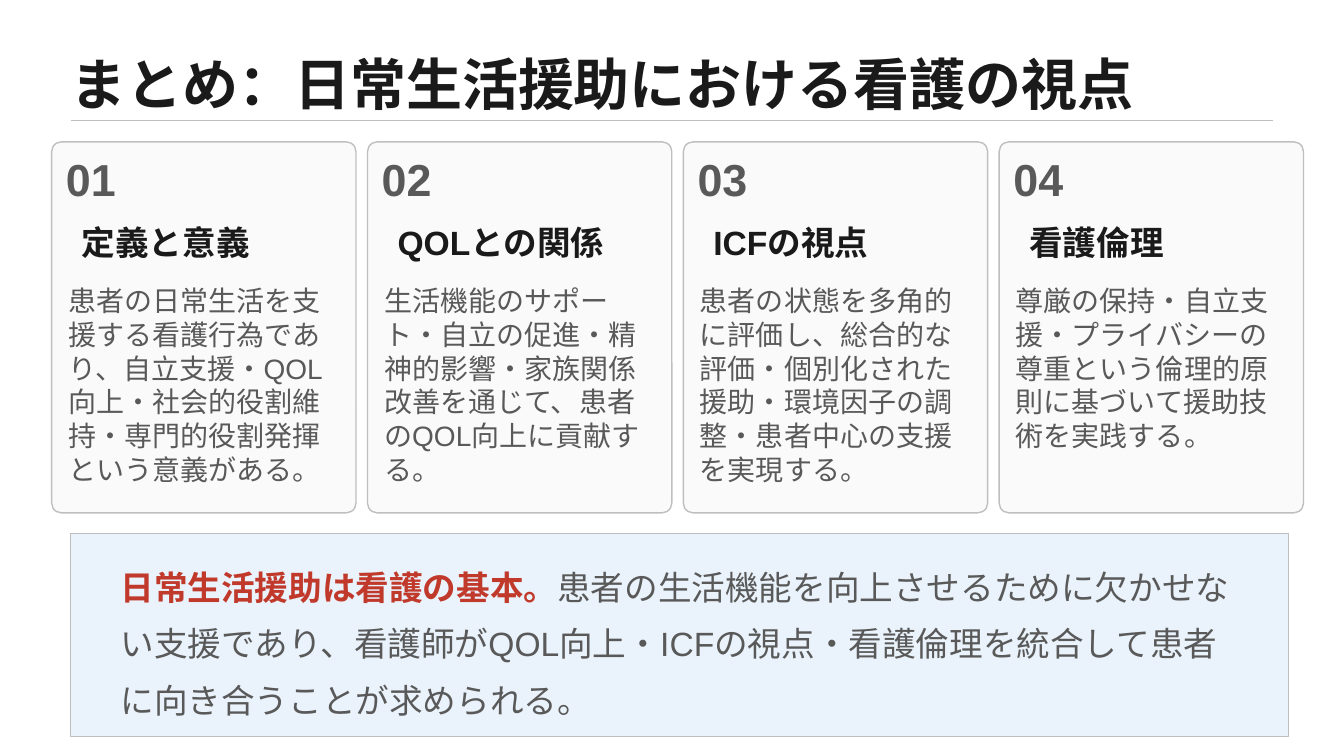
from dataclasses import dataclass

from lxml import etree
from pptx import Presentation
from pptx.dml.color import RGBColor
from pptx.enum.shapes import MSO_CONNECTOR, MSO_SHAPE
from pptx.enum.text import MSO_ANCHOR, PP_ALIGN
from pptx.oxml.ns import qn
from pptx.util import Pt

STRAIGHT = MSO_CONNECTOR.STRAIGHT
RECTANGLE = MSO_SHAPE.RECTANGLE
ROUNDED = MSO_SHAPE.ROUNDED_RECTANGLE
TOP = MSO_ANCHOR.TOP
MIDDLE = MSO_ANCHOR.MIDDLE
LEFT = PP_ALIGN.LEFT
CENTER = PP_ALIGN.CENTER


@dataclass(frozen=True)
class Theme:
    """Colours, font and type sizes of the slide."""
    font: str = "Arial"
    ink: str = "1A1A1A"
    body: str = "595959"
    accent: str = "C0392B"
    rule: str = "BFBFBF"
    card: str = "FAFAFA"
    banner: str = "EAF3FB"
    title_size: int = 40
    number_size: int = 32
    heading_size: int = 24
    body_size: int = 20


THEME = Theme()
TITLE = "まとめ：日常生活援助における看護の視点"
VIEWPOINTS = [
    ("定義と意義", "患者の日常生活を支援する看護行為であり、自立支援・QOL向上・"
     "社会的役割維持・専門的役割発揮という意義がある。"),
    ("QOLとの関係", "生活機能のサポート・自立の促進・精神的影響・"
     "家族関係改善を通じて、患者のQOL向上に貢献する。"),
    ("ICFの視点", "患者の状態を多角的に評価し、総合的な評価・個別化された援助・"
     "環境因子の調整・患者中心の支援を実現する。"),
    ("看護倫理", "尊厳の保持・自立支援・プライバシーの尊重という"
     "倫理的原則に基づいて援助技術を実践する。"),
]
KEY_MESSAGE = "日常生活援助は看護の基本。"
EXPLANATION = ("患者の生活機能を向上させるために欠かせない支援であり、看護師がQOL向上・"
               "ICFの視点・看護倫理を統合して患者に向き合うことが求められる。")


def add_text(slide, box, runs, size, anchor=TOP, align=LEFT, spacing=None, inset=None):
    """Add a wrapped paragraph made of (text, colour, bold) runs."""
    frame = slide.shapes.add_textbox(*map(Pt, box)).text_frame
    frame.word_wrap = True
    frame.vertical_anchor = anchor
    if inset is not None:
        frame.margin_left = frame.margin_right = Pt(inset)
        frame.margin_top = frame.margin_bottom = Pt(inset)
    paragraph = frame.paragraphs[0]
    paragraph.alignment = align
    if spacing:
        paragraph.line_spacing = spacing
    for text, colour, bold in runs:
        run = paragraph.add_run()
        run.text = text
        run.font.name = THEME.font
        run.font.size = Pt(size)
        run.font.bold = bold
        run.font.color.rgb = RGBColor.from_string(colour)


def add_panel(slide, kind, box, fill):
    """Add a filled, thinly outlined panel and return it."""
    panel = slide.shapes.add_shape(kind, *map(Pt, box))
    panel.shadow.inherit = False
    panel.fill.solid()
    panel.fill.fore_color.rgb = RGBColor.from_string(fill)
    panel.line.color.rgb = RGBColor.from_string(THEME.rule)
    panel.line.width = Pt(1)
    return panel


def add_title(slide, box):
    """Add the slide title with the rule under it."""
    left, top, width, height = box
    add_text(slide, box, [(TITLE, THEME.ink, True)], THEME.title_size, MIDDLE, inset=0)
    rule_y = top + height - 3
    rule = slide.shapes.add_connector(
        STRAIGHT, Pt(left), Pt(rule_y), Pt(left + width), Pt(rule_y))
    rule.line.color.rgb = RGBColor.from_string(THEME.rule)
    rule.line.width = Pt(1)
    etree.SubElement(rule._element.spPr, qn("a:effectLst"))


def add_card(slide, box, number, heading, summary):
    """Add one numbered viewpoint card."""
    left, top, width, _ = box
    add_panel(slide, ROUNDED, box, THEME.card).adjustments[0] = 0.032
    add_text(slide, (left, top, 56, 52), [(f"{number:02d}", THEME.body, True)],
             THEME.number_size, MIDDLE, CENTER)
    add_text(slide, (left + 14.4, top + 54, 183, 56), [(heading, THEME.ink, True)],
             THEME.heading_size)
    add_text(slide, (left + 4.8, top + 98, width - 15.8, 132.5),
             [(summary, THEME.body, False)], THEME.body_size)


def add_cards(slide, box, gap):
    """Lay the viewpoint cards out in equal columns."""
    left, top, width, height = box
    count = len(VIEWPOINTS)
    card_width = (width - gap * (count - 1)) / count
    for index, (heading, summary) in enumerate(VIEWPOINTS):
        card_left = left + index * (card_width + gap)
        add_card(slide, (card_left, top, card_width, height), index + 1, heading, summary)


def add_conclusion(slide, box):
    """Add the closing banner with its key message."""
    left, top, width, height = box
    add_panel(slide, RECTANGLE, box, THEME.banner)
    add_text(slide, (left + 28.8, top, width - 58.3, height),
             [(KEY_MESSAGE, THEME.accent, True), (EXPLANATION, THEME.body, False)],
             THEME.heading_size, MIDDLE, spacing=1.4)


def main():
    """Build and save the summary slide."""
    deck = Presentation()
    deck.slide_width, deck.slide_height = Pt(960), Pt(540)
    slide = deck.slides.add_slide(deck.slide_layouts[6])
    add_title(slide, (50.4, 30.2, 859, 59))
    add_cards(slide, (36.9, 101.3, 894.2, 265), 8.2)
    add_conclusion(slide, (50.2, 381, 870, 145.3))
    deck.save("out.pptx")


if __name__ == "__main__":
    main()
